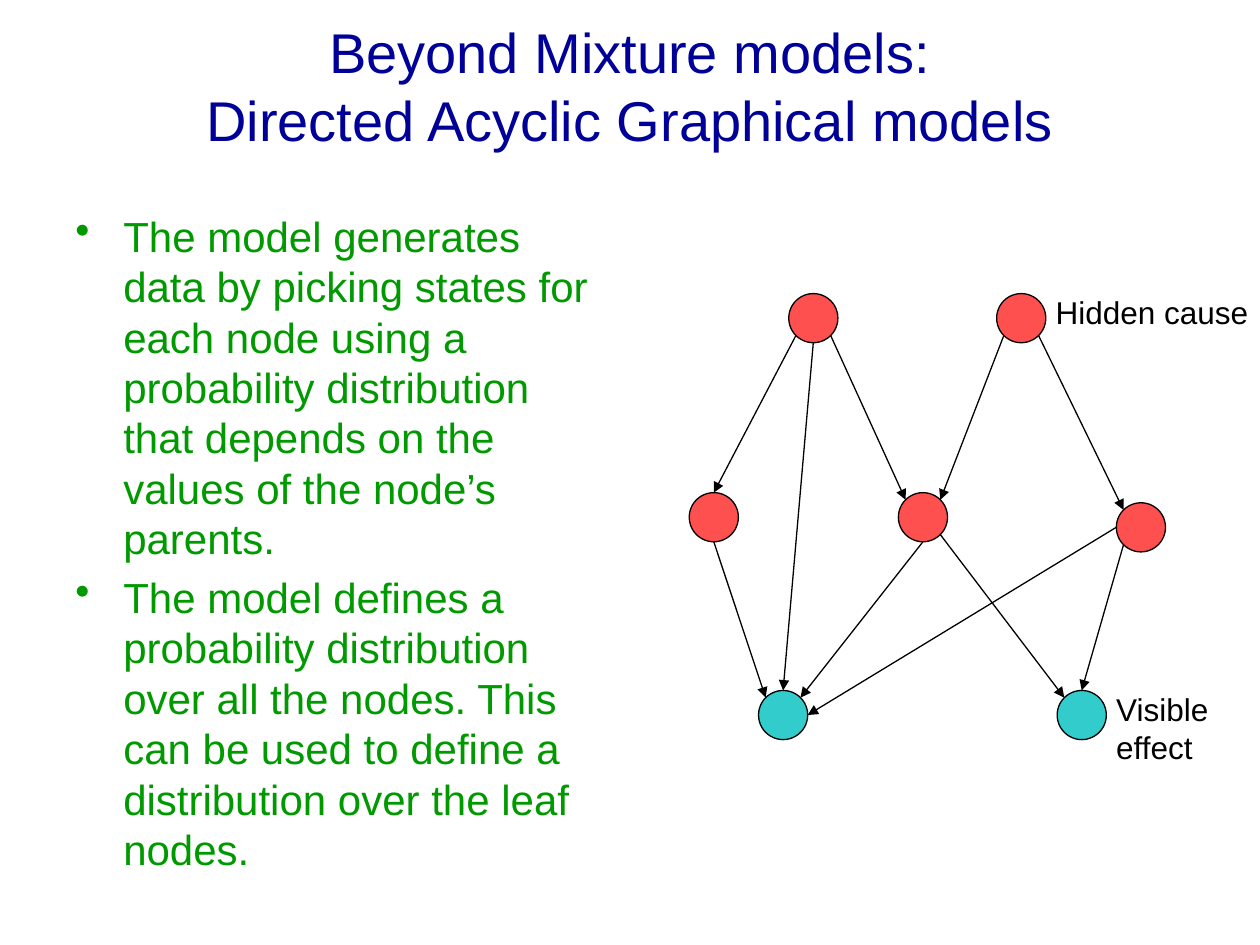
import math

import pptx
import pptx.dml.color
import pptx.enum.shapes
import pptx.enum.text
import pptx.oxml
import pptx.oxml.ns
import pptx.util

Inches = pptx.util.Inches
Pt = pptx.util.Pt
Align = pptx.enum.text.PP_ALIGN
Anchor = pptx.enum.text.MSO_ANCHOR

DIAMETER = 0.39
HIDDEN, VISIBLE = "FF5050", "33CCCC"

NODES = {
    "left cause": (6.26, 2.33, HIDDEN),
    "right cause": (7.91, 2.33, HIDDEN),
    "left middle": (5.47, 3.91, HIDDEN),
    "centre middle": (7.13, 3.91, HIDDEN),
    "right middle": (8.86, 3.99, HIDDEN),
    "left effect": (6.02, 5.48, VISIBLE),
    "right effect": (8.39, 5.48, VISIBLE),
}

ANGLES = {"E": 0, "SE": 45, "S": 90, "SW": 135, "W": 180, "NW": 225, "N": 270, "NE": 315}

EDGES = [
    ("left cause", "SW", "left middle", "N"),
    ("left cause", "S", "left effect", "N"),
    ("left cause", "SE", "centre middle", "NW"),
    ("right cause", "SW", "centre middle", "NE"),
    ("right cause", "SE", "right middle", "NW"),
    ("left middle", "S", "left effect", "NW"),
    ("centre middle", "S", "left effect", "NE"),
    ("centre middle", "SE", "right effect", "NW"),
    ("right middle", "W", "left effect", "E"),
    ("right middle", "SW", "right effect", "N"),
]

POINTS = [
    "The model generates data by picking states for each node using a probability "
    "distribution that depends on the values of the node’s parents.",
    "The model defines a probability distribution over all the nodes. This can be "
    "used to define a distribution over the leaf nodes.",
]


def colour(value):
    return pptx.dml.color.RGBColor.from_string(value)


def rim_point(node, side):
    left, top, fill = NODES[node]
    angle = math.radians(ANGLES[side])
    radius = DIAMETER / 2
    return (
        Inches(left + radius + radius * math.cos(angle)),
        Inches(top + radius + radius * math.sin(angle)),
    )


class Painter:
    """Draws styled elements on the current slide."""

    font = "Arial"
    ink = "000000"
    stroke = 0.75

    def __init__(self, page):
        self.page = page

    def text(self, frame, content, size, ink, align=Align.LEFT, anchor=Anchor.TOP, wrap=True):
        box = self.page.shapes.add_textbox(*map(Inches, frame))
        box.text_frame.word_wrap = wrap
        box.text_frame.vertical_anchor = anchor
        box.text_frame.text = content
        for para in box.text_frame.paragraphs:
            para.alignment = align
            for span in para.runs:
                span.font.name = self.font
                span.font.size = Pt(size)
                span.font.color.rgb = colour(ink)
        return box

    def bullets(self, frame, points, size, ink, indent):
        box = self.text(frame, "\n".join(points), size, ink)
        for para in box.text_frame.paragraphs:
            para.space_before = Pt(size * 0.2)
            settings = para._p.get_or_add_pPr()
            settings.set("marL", str(Inches(indent)))
            settings.set("indent", str(-Inches(indent)))
            bullet = pptx.oxml.parse_xml(f'<a:buChar {pptx.oxml.ns.nsdecls("a")} char="•"/>')
            settings.append(bullet)

    def node(self, left, top, fill):
        circle = self.page.shapes.add_shape(
            pptx.enum.shapes.MSO_SHAPE.OVAL, *map(Inches, (left, top, DIAMETER, DIAMETER))
        )
        circle.shadow.inherit = False
        circle.fill.solid()
        circle.fill.fore_color.rgb = colour(fill)
        circle.line.color.rgb = colour(self.ink)
        circle.line.width = Pt(self.stroke)

    def arrow(self, start, end):
        line = self.page.shapes.add_connector(
            pptx.enum.shapes.MSO_CONNECTOR.STRAIGHT, *start, *end
        )
        line.line.color.rgb = colour(self.ink)
        line.line.width = Pt(self.stroke)
        namespace = pptx.oxml.ns.nsdecls("a")
        head = pptx.oxml.parse_xml(f'<a:tailEnd {namespace} type="triangle"/>')
        line.line._get_or_add_ln().append(head)
        line._element.spPr.append(pptx.oxml.parse_xml(f"<a:effectLst {namespace}/>"))


def main():
    deck = pptx.Presentation()
    deck.slide_width, deck.slide_height = Inches(10), Inches(7.5)
    painter = Painter(deck.slides.add_slide(deck.slide_layouts[6]))

    title = "Beyond Mixture models:\vDirected Acyclic Graphical models"
    painter.text((0.5, 0.05, 9, 1.25), title, 32, "000099", Align.CENTER, Anchor.MIDDLE)
    painter.bullets((0.5, 1.62, 4.42, 5.48), POINTS, 24, "009900", 0.38)

    for left, top, fill in NODES.values():
        painter.node(left, top, fill)
    for parent, leaving, child, entering in EDGES:
        painter.arrow(rim_point(parent, leaving), rim_point(child, entering))

    painter.text((8.28, 2.28, 1.73, 0.4), "Hidden cause", 18, painter.ink, wrap=False)
    painter.text((8.76, 5.43, 1.01, 0.7), "Visible\neffect", 18, painter.ink, wrap=False)

    deck.save("out.pptx")


if __name__ == "__main__":
    main()
